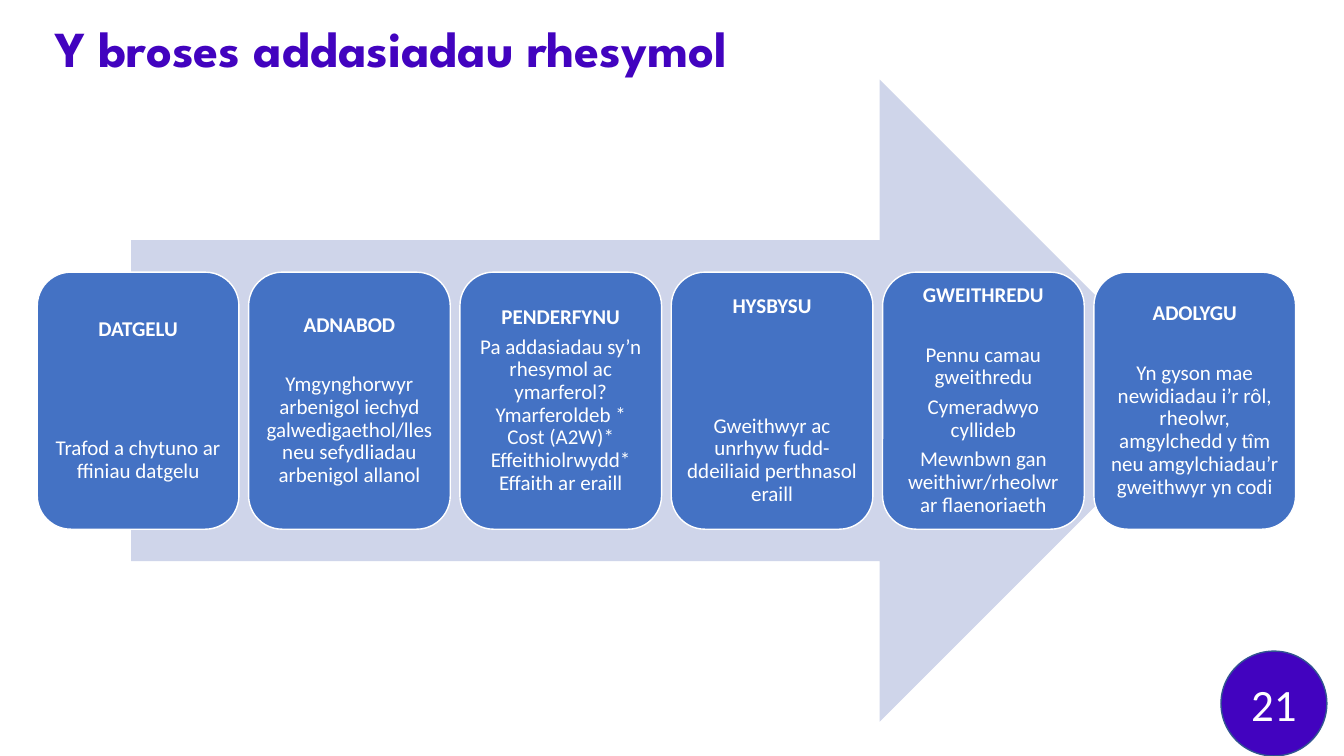
from copy import deepcopy

from pptx import Presentation
from pptx.dml.color import RGBColor
from pptx.enum.shapes import MSO_SHAPE
from pptx.enum.text import MSO_ANCHOR, PP_ALIGN
from pptx.oxml.ns import qn
from pptx.util import Inches, Pt

PURPLE, BLUE, PALE, WHITE, EDGE = "4203BF", "4472C4", "CFD5EA", "FFFFFF", "325491"
FIRST_LEFT, LAST_LEFT = 0.37, 10.85
PARA_GAP, LINE_STEP = 5, 21.4

# (heading, empty line steps below it, body paragraphs)
STAGES = [
    ("DATGELU", 3, ["Trafod a chytuno ar ffiniau datgelu"]),
    ("ADNABOD", 1, ["Ymgynghorwyr arbenigol iechyd galwedigaethol/lles "
                    "neu sefydliadau arbenigol allanol"]),
    ("PENDERFYNU", 0, ["Pa addasiadau sy’n rhesymol ac ymarferol? Ymarferoldeb * "
                       "Cost (A2W)* Effeithiolrwydd*\nEffaith ar eraill"]),
    ("HYSBYSU", 3, ["Gweithwyr ac unrhyw fudd-ddeiliaid perthnasol eraill"]),
    ("GWEITHREDU", 1, ["Pennu camau gweithredu", "Cymeradwyo cyllideb",
                       "Mewnbwn gan weithiwr/rheolwr ar flaenoriaeth"]),
    ("ADOLYGU", 1, ["Yn gyson mae newidiadau i’r rôl, rheolwr, amgylchedd y tîm "
                    "neu amgylchiadau’r gweithwyr yn codi"]),
]


def rgb(value):
    return RGBColor.from_string(value)


def set_attrs(obj, values):
    for name, value in values.items():
        setattr(obj, name, value)


def write(p, text, size, color, bold=False, font="Calibri", **layout):
    set_attrs(p, layout)
    for i, line in enumerate(text.split("\n")):
        if i:
            p.add_line_break()
        r = p.add_run()
        r.text = line
        set_attrs(r.font, {"size": Pt(size), "bold": bold, "name": font})
        r.font.color.rgb = rgb(color)
    for br in p._p.findall(qn("a:br")):
        br.append(deepcopy(p.runs[0]._r.rPr))


def add_shape(s, kind, box, fill, line=None):
    sp = s.shapes.add_shape(kind, *map(Inches, box))
    sp.shadow.inherit = False
    sp.fill.solid()
    sp.fill.fore_color.rgb = rgb(fill)
    if line:
        sp.line.color.rgb = rgb(line)
        sp.line.width = Pt(1)
    else:
        sp.line.fill.background()
    set_attrs(sp.text_frame, {"word_wrap": True, "vertical_anchor": MSO_ANCHOR.MIDDLE})
    return sp


def add_title(s, text):
    tf = s.shapes.add_textbox(*map(Inches, (0.45, 0.19, 11.83, 1.02))).text_frame
    tf.word_wrap = True
    write(tf.paragraphs[0], text, 36, PURPLE, True, "League Spartan", line_spacing=0.9)


def add_stage(s, left, heading, steps, body):
    tf = add_shape(s, MSO_SHAPE.ROUNDED_RECTANGLE, (left, 2.7, 2, 2.55), BLUE, WHITE).text_frame
    sides = ("left", "right", "top", "bottom")
    set_attrs(tf, {f"margin_{side}": Inches(0.06) for side in sides})
    layout = {"alignment": PP_ALIGN.CENTER, "line_spacing": 0.9}
    write(tf.paragraphs[0], heading, 15, WHITE, True,
          space_after=Pt(PARA_GAP + steps * LINE_STEP), **layout)
    for text in body:
        write(tf.add_paragraph(), text, 15, WHITE, space_after=Pt(PARA_GAP), **layout)


def add_page_number(s, text):
    sp = add_shape(s, MSO_SHAPE.OVAL, (12.11, 6.46, 1.05, 1.04), PURPLE, EDGE)
    write(sp.text_frame.paragraphs[0], text, 32, WHITE, alignment=PP_ALIGN.CENTER)


def main():
    prs = Presentation()
    set_attrs(prs, {"slide_width": Inches(13.33), "slide_height": Inches(7.5)})
    s = prs.slides.add_slide(prs.slide_layouts[6])
    add_title(s, "Y broses addasiadau rhesymol")
    add_shape(s, MSO_SHAPE.RIGHT_ARROW, (1.3, 0.79, 10.61, 6.37), PALE)
    pitch = (LAST_LEFT - FIRST_LEFT) / (len(STAGES) - 1)
    for i, stage in enumerate(STAGES):
        add_stage(s, FIRST_LEFT + i * pitch, *stage)
    add_page_number(s, "21")
    prs.save("out.pptx")


if __name__ == "__main__":
    main()
